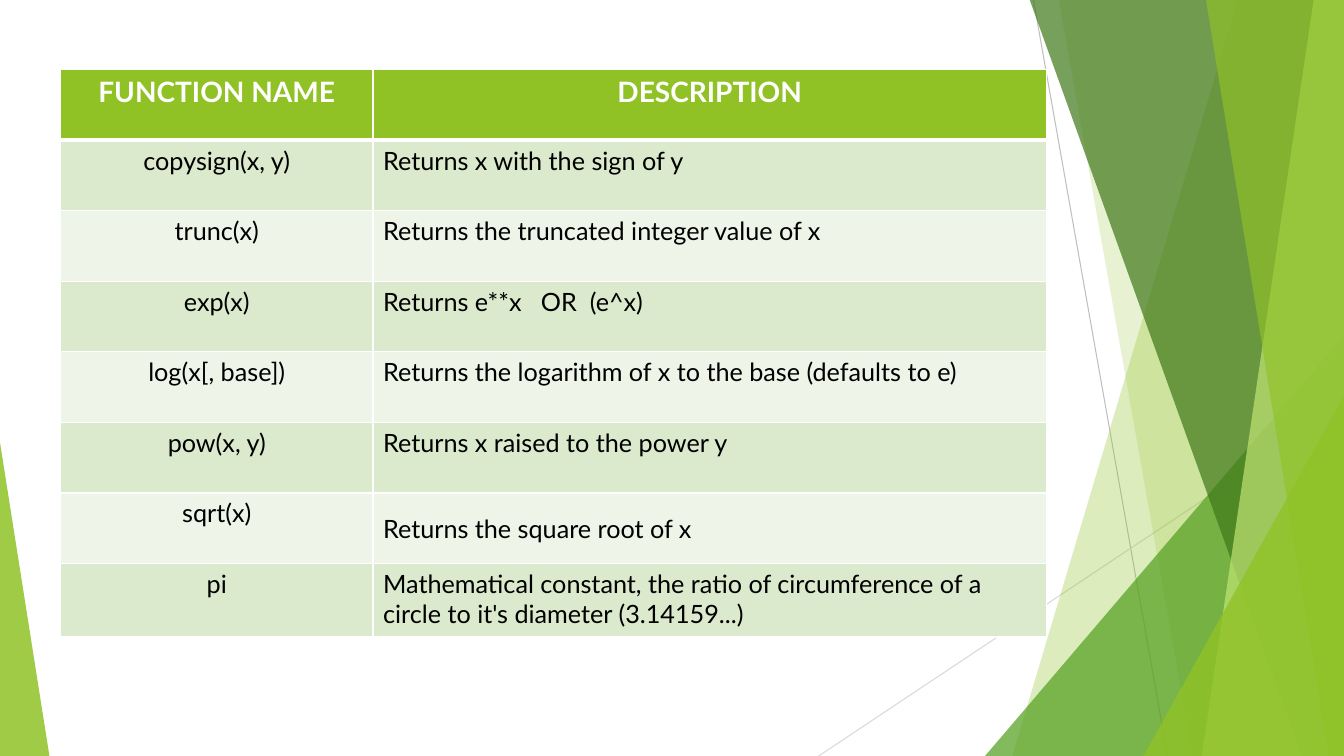
from lxml.etree import SubElement
from pptx import Presentation
from pptx.dml.color import RGBColor
from pptx.enum.shapes import MSO_CONNECTOR, MSO_SHAPE
from pptx.enum.text import MSO_ANCHOR, PP_ALIGN
from pptx.oxml.ns import qn
from pptx.util import Pt

PX = 9144  # 100 px to the inch
WIDTH, HEIGHT = 1333, 750
LIME, WHITE, BLACK = "90C226", "FFFFFF", "000000"
BANDS = ("EEF4E8", "DBE9CD")

FUNCTIONS = [
    ("FUNCTION NAME", "DESCRIPTION"),
    ("copysign(x, y)", "Returns x with the sign of y"),
    ("trunc(x)", "Returns the truncated integer value of x"),
    ("exp(x)", "Returns e**x   OR  (e^x)"),
    ("log(x[, base])", "Returns the logarithm of x to the base (defaults to e)"),
    ("pow(x, y)", "Returns x raised to the power y"),
    ("sqrt(x)", "Returns the square root of x"),
    ("pi", "Mathematical constant, the ratio of circumference of a "
           "circle to it's diameter (3.14159...)"),
]


def px(*lengths):
    return [length * PX for length in lengths]


def rgb(color):
    return RGBColor.from_string(color)


def set_format(target, values):
    for name, value in values.items():
        setattr(target, name, value)


def paint(shape, color, opacity):
    """Fill without outline or shadow; opacity is in percent."""
    shape.shadow.inherit = False
    shape.line.fill.background()
    shape.fill.solid()
    shape.fill.fore_color.rgb = rgb(color)
    tint = shape.fill._xPr.find(qn("a:solidFill"))[0]
    SubElement(tint, qn("a:alpha"), val=str(opacity * 1000))


def add_hairline(page, start, end, color):
    line = page.shapes.add_connector(MSO_CONNECTOR.STRAIGHT, *px(*start, *end))
    line.line.color.rgb = rgb(color)
    line.line.width = Pt(0.75)
    SubElement(line._element.spPr, qn("a:effectLst"))


def add_shard(page, box, top_x, bottom_x, color, opacity):
    """Slanted panel whose right side is the right side of the box."""
    left, top, width, height = box
    right, bottom = left + width, top + height
    builder = page.shapes.build_freeform(top_x, top, scale=PX)
    builder.add_line_segments([(right, top), (right, bottom), (bottom_x, bottom)])
    paint(builder.convert_to_shape(), color, opacity)


def add_corner(page, box, apex, color, opacity):
    """Triangle whose apex is over its left (0) or right (1) end."""
    corner = page.shapes.add_shape(MSO_SHAPE.ISOSCELES_TRIANGLE, *px(*box))
    corner.adjustments[0] = apex
    paint(corner, color, opacity)


def add_facets(page, box):
    left, top, width, height = box
    right, bottom = left + width, top + height
    panels = (left, top - 1, width, height + 1)
    add_hairline(page, (right - 308, top), (right - 175, bottom), "BFBFBF")
    add_hairline(page, (right, top + 403), (right - 521, bottom), "D9D9D9")
    add_shard(page, panels, right - 105, right - 329, LIME, 30)
    add_shard(page, panels, right - 283, right - 150, LIME, 20)
    add_corner(page, (right - 356, bottom - 417, 356, 417), 1, "54A021", 72)
    add_shard(page, panels, right - 312, right - 42, "3F7819", 70)
    add_shard(page, panels, right - 30, right - 141, "C0E474", 70)
    add_shard(page, panels, right - 137, right - 15, LIME, 65)
    add_corner(page, (right - 199, bottom - 357, 199, 357), 1, LIME, 80)
    add_corner(page, (left, bottom - 311, 49, 311), 0, LIME, 85)


def add_borders(cell, widths):
    """Draw white borders; widths in points by side."""
    properties = cell._tc.get_or_add_tcPr()
    for side, width in widths.items():
        border = SubElement(properties, qn(f"a:ln{side}"), w=str(Pt(width)))
        fill = SubElement(border, qn("a:solidFill"))
        SubElement(fill, qn("a:srgbClr"), val=WHITE)


def fill_cell(cell, text, row, column):
    header = row == 0
    add_borders(cell, {"L": 1, "R": 1, "T": 3 if row == 1 else 1,
                       "B": 3 if header else 1})
    cell.fill.solid()
    cell.fill.fore_color.rgb = rgb(LIME if header else BANDS[row % 2])
    para = cell.text_frame.paragraphs[0]
    centred = header or column == 0
    para.alignment = PP_ALIGN.CENTER if centred else PP_ALIGN.LEFT
    span = para.add_run()
    span.text = text
    set_format(span.font, {"name": "Lato", "size": Pt(20 if header else 18),
                           "bold": header})
    span.font.color.rgb = rgb(WHITE if header else BLACK)


def add_function_table(page, box):
    left, top, width, height = box
    name_width, row_height = 310, 70
    frame = page.shapes.add_table(len(FUNCTIONS), 2, *px(*box))
    table = frame.table
    for column, length in zip(table.columns, px(name_width, width - name_width)):
        column.width = length
    for row in table.rows:
        row.height = row_height * PX
    table.rows[len(FUNCTIONS) - 1].height = (
        height - row_height * (len(FUNCTIONS) - 1)) * PX
    for row, texts in enumerate(FUNCTIONS):
        for column, text in enumerate(texts):
            fill_cell(table.cell(row, column), text, row, column)
    square_root = table.cell(6, 1)
    margins = px(10, 10, 8, 9)
    sides = ("margin_left", "margin_top", "margin_right", "margin_bottom")
    set_format(square_root, dict(zip(sides, margins)))
    square_root.vertical_anchor = MSO_ANCHOR.MIDDLE


def main():
    deck = Presentation()
    deck.slide_width, deck.slide_height = px(WIDTH, HEIGHT)
    page = deck.slides.add_slide(deck.slide_layouts[6])
    add_facets(page, (0, 0, WIDTH, HEIGHT))
    add_function_table(page, (60, 69, 978, 563))
    deck.save("out.pptx")


if __name__ == "__main__":
    main()
